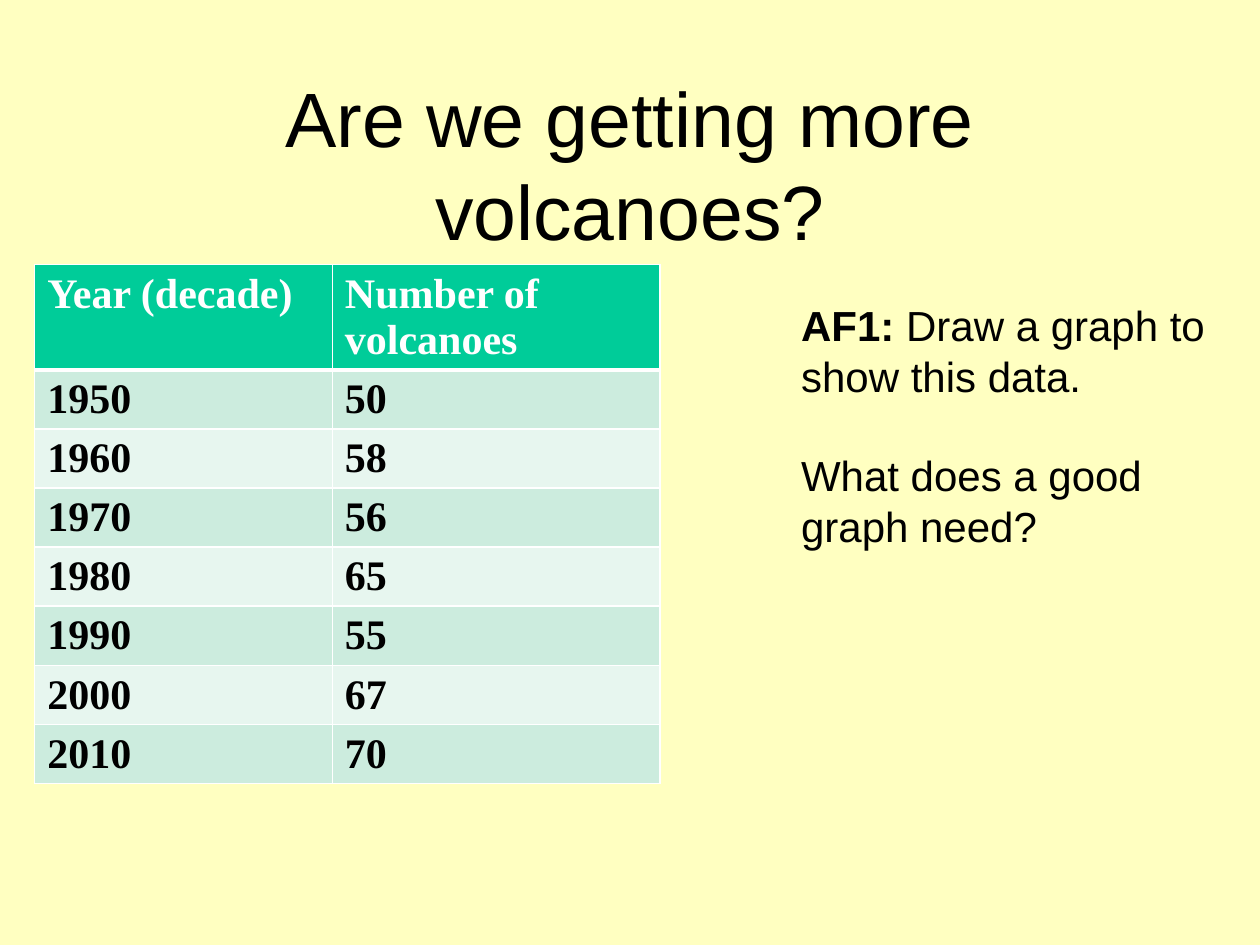
from lxml.etree import SubElement
from pptx import Presentation
from pptx.dml.color import RGBColor
from pptx.enum.text import MSO_ANCHOR, MSO_AUTO_SIZE, PP_ALIGN
from pptx.oxml.ns import qn
from pptx.util import Cm, Pt

TITLE = "Are we getting more volcanoes?"
HEADINGS = ("Year (decade)", "Number of volcanoes")
VOLCANOES = [
    ("1950", "50"),
    ("1960", "58"),
    ("1970", "56"),
    ("1980", "65"),
    ("1990", "55"),
    ("2000", "67"),
    ("2010", "70"),
]
TASK_LABEL = "AF1: "
TASK = "Draw a graph to show this data."
QUESTION = "What does a good graph need?"

BACKGROUND, BLACK, WHITE = "FFFFC1", "000000", "FFFFFF"
HEADING_FILL = "00CC99"
BAND_FILLS = ("CCECDE", "E7F6EF")
COLUMN_WIDTHS = (Cm(6), Cm(6.6))
ROW_HEIGHT = Cm(1.04)


def color(hex_value):
    return RGBColor.from_string(hex_value)


def add_text(paragraph, text, font="Arial", size=24, fill=BLACK, bold=False):
    run = paragraph.add_run()
    run.text = text
    run.font.name = font
    run.font.size = Pt(size)
    run.font.bold = bold
    run.font.color.rgb = color(fill)


def set_borders(cell, bottom_width):
    properties = cell._tc.get_or_add_tcPr()
    widths = {"a:lnL": 1, "a:lnR": 1, "a:lnT": 1, "a:lnB": bottom_width}
    for position, (tag, width) in enumerate(widths.items()):
        line = SubElement(properties, qn(tag), w=str(Pt(width)))
        fill = SubElement(line, qn("a:solidFill"))
        SubElement(fill, qn("a:srgbClr"), val=WHITE)
        properties.insert(position, line)


def add_title(slide):
    title = slide.shapes.title
    title.left, title.top, title.width, title.height = Cm(1.9), Cm(1.7), Cm(21.6), Cm(3.18)
    frame = title.text_frame
    frame.auto_size = MSO_AUTO_SIZE.NONE
    frame.word_wrap = True
    frame.vertical_anchor = MSO_ANCHOR.MIDDLE
    paragraph = frame.paragraphs[0]
    paragraph.alignment = PP_ALIGN.CENTER
    add_text(paragraph, TITLE, size=44)


def add_volcano_table(slide):
    rows = [HEADINGS, *VOLCANOES]
    table = slide.shapes.add_table(
        len(rows), len(HEADINGS), Cm(0.7), Cm(5.33), sum(COLUMN_WIDTHS), ROW_HEIGHT * len(rows)
    ).table
    for column, width in zip(table.columns, COLUMN_WIDTHS):
        column.width = width
    for row_index, values in enumerate(rows):
        is_heading = row_index == 0
        fill = HEADING_FILL if is_heading else BAND_FILLS[(row_index - 1) % 2]
        for column_index, value in enumerate(values):
            cell = table.cell(row_index, column_index)
            cell.fill.solid()
            cell.fill.fore_color.rgb = color(fill)
            set_borders(cell, bottom_width=3 if is_heading else 1)
            add_text(
                cell.text_frame.paragraphs[0],
                value,
                font="Times New Roman",
                fill=WHITE if is_heading else BLACK,
                bold=True,
            )


def add_task(slide):
    frame = slide.shapes.add_textbox(Cm(15.9), Cm(5.92), Cm(9.1), Cm(5.38)).text_frame
    frame.word_wrap = True
    task = frame.paragraphs[0]
    add_text(task, TASK_LABEL, bold=True)
    add_text(task, TASK)
    question = frame.add_paragraph()
    question.space_before = Pt(28)
    add_text(question, QUESTION)


def main():
    presentation = Presentation()
    presentation.slide_width, presentation.slide_height = Cm(25.4), Cm(19.05)
    slide = presentation.slides.add_slide(presentation.slide_layouts.get_by_name("Title Only"))
    slide.background.fill.solid()
    slide.background.fill.fore_color.rgb = color(BACKGROUND)
    add_title(slide)
    add_volcano_table(slide)
    add_task(slide)
    presentation.save("out.pptx")


if __name__ == "__main__":
    main()
